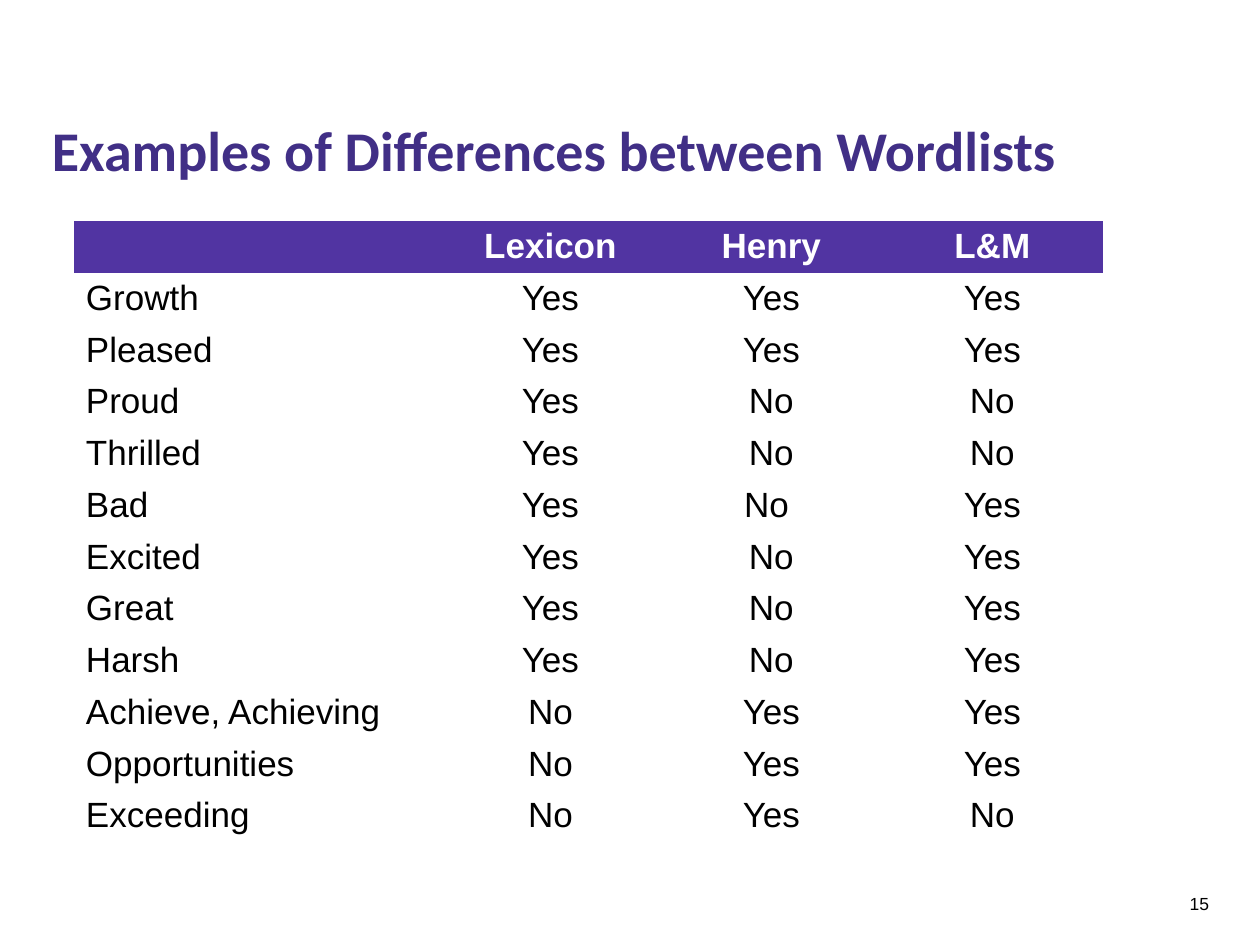
from typing import NamedTuple

from pptx import Presentation
from pptx.dml.color import RGBColor
from pptx.enum.text import MSO_ANCHOR, PP_ALIGN as Align
from pptx.oxml.ns import qn
from pptx.util import Emu, Pt

PX = 914400 // 126
WHITE, BLACK, PURPLE, INDIGO = "FFFFFF", "000000", "5134A2", "412F86"
NO_GRID = "{2D5ABB26-0587-4C30-8999-92F81FD0307C}"


class Box(NamedTuple):
    left: int
    top: int
    width: int
    height: int


class Style(NamedTuple):
    size: int
    color: str
    font: str = "Arial"
    bold: bool = False
    align: Align = Align.LEFT


class Label(NamedTuple):
    text: str
    box: Box
    style: Style


LABELS = [
    Label("15", Box(1165, 893, 44, 21), Style(10, BLACK, align=Align.RIGHT)),
    Label("Examples of Differences between Wordlists", Box(52, 116, 1152, 126),
          Style(32, INDIGO, "Calibri", True)),
]
GRID = Box(74, 221, 1029, 621)
COLS = [366, 221, 221, 221]
ROWS = [
    ("", "Lexicon", "Henry", "L&M"),
    ("Growth", "Yes", "Yes", "Yes"),
    ("Pleased", "Yes", "Yes", "Yes"),
    ("Proud", "Yes", "No", "No"),
    ("Thrilled", "Yes", "No", "No"),
    ("Bad", "Yes", "No ", "Yes"),
    ("Excited", "Yes", "No", "Yes"),
    ("Great", "Yes", "No", "Yes"),
    ("Harsh", "Yes", "No", "Yes"),
    ("Achieve, Achieving", "No", "Yes", "Yes"),
    ("Opportunities", "No", "Yes", "Yes"),
    ("Exceeding", "No", "Yes", "No"),
]


def px(count: int) -> Emu:
    return Emu(count * PX)


def rgb(code: str) -> RGBColor:
    return RGBColor.from_string(code)


def assign(target, values: dict) -> None:
    for name, value in values.items():
        setattr(target, name, value)


def write(frame, text: str, style: Style) -> None:
    para = frame.paragraphs[0]
    para.alignment = style.align
    font = para.font
    if text:
        run = para.add_run()
        run.text = text
        font = run.font
    assign(font, {"size": Pt(style.size), "name": style.font, "bold": style.bold})
    font.color.rgb = rgb(style.color)


def add_label(slide, label: Label) -> None:
    frame = slide.shapes.add_textbox(*map(px, label.box)).text_frame
    assign(frame, {"word_wrap": True, "vertical_anchor": MSO_ANCHOR.TOP,
                   "margin_left": 0, "margin_right": 0,
                   "margin_top": 0, "margin_bottom": 0})
    write(frame, label.text, label.style)


def add_grid(slide) -> None:
    table = slide.shapes.add_table(len(ROWS), len(COLS), *map(px, GRID)).table
    table.horz_banding = False
    table._tbl.tblPr.find(qn("a:tableStyleId")).text = NO_GRID
    for col, width in zip(table.columns, COLS):
        col.width = px(width)
    for r, words in enumerate(ROWS):
        table.rows[r].height = Emu(px(GRID.height) // len(ROWS))
        head = r == 0
        for c, word in enumerate(words):
            cell = table.cell(r, c)
            cell.fill.solid()
            cell.fill.fore_color.rgb = rgb(PURPLE if head else WHITE)
            assign(cell, {"margin_left": px(12), "margin_right": px(12),
                          "margin_top": px(6), "margin_bottom": px(3)})
            write(cell.text_frame, word,
                  Style(20, WHITE if head else BLACK, bold=head,
                        align=Align.CENTER if c else Align.LEFT))


def main() -> None:
    deck = Presentation()
    assign(deck, {"slide_width": px(1260), "slide_height": px(945)})
    slide = deck.slides.add_slide(deck.slide_layouts[6])
    for label in LABELS:
        add_label(slide, label)
    add_grid(slide)
    deck.save("out.pptx")


if __name__ == "__main__":
    main()
